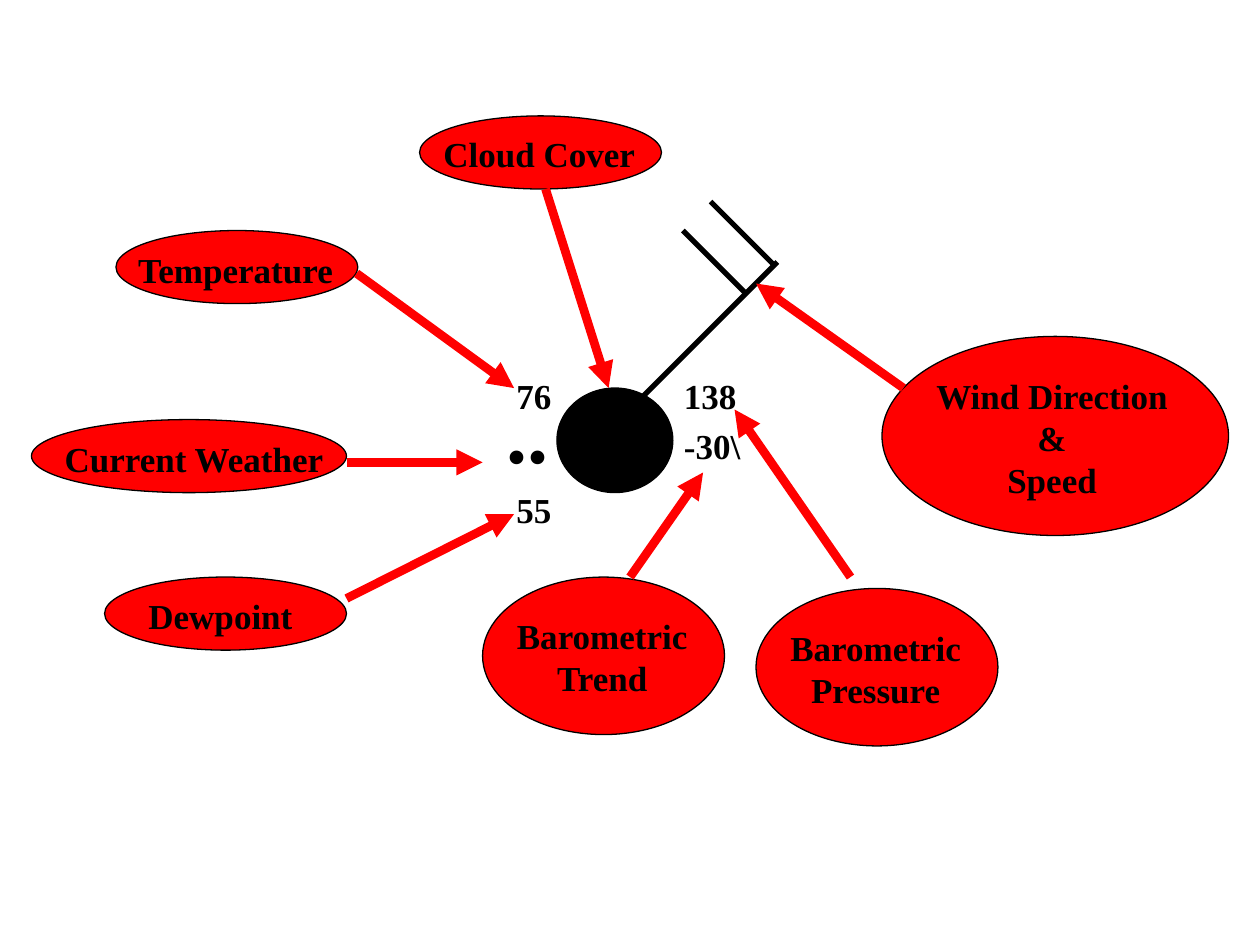
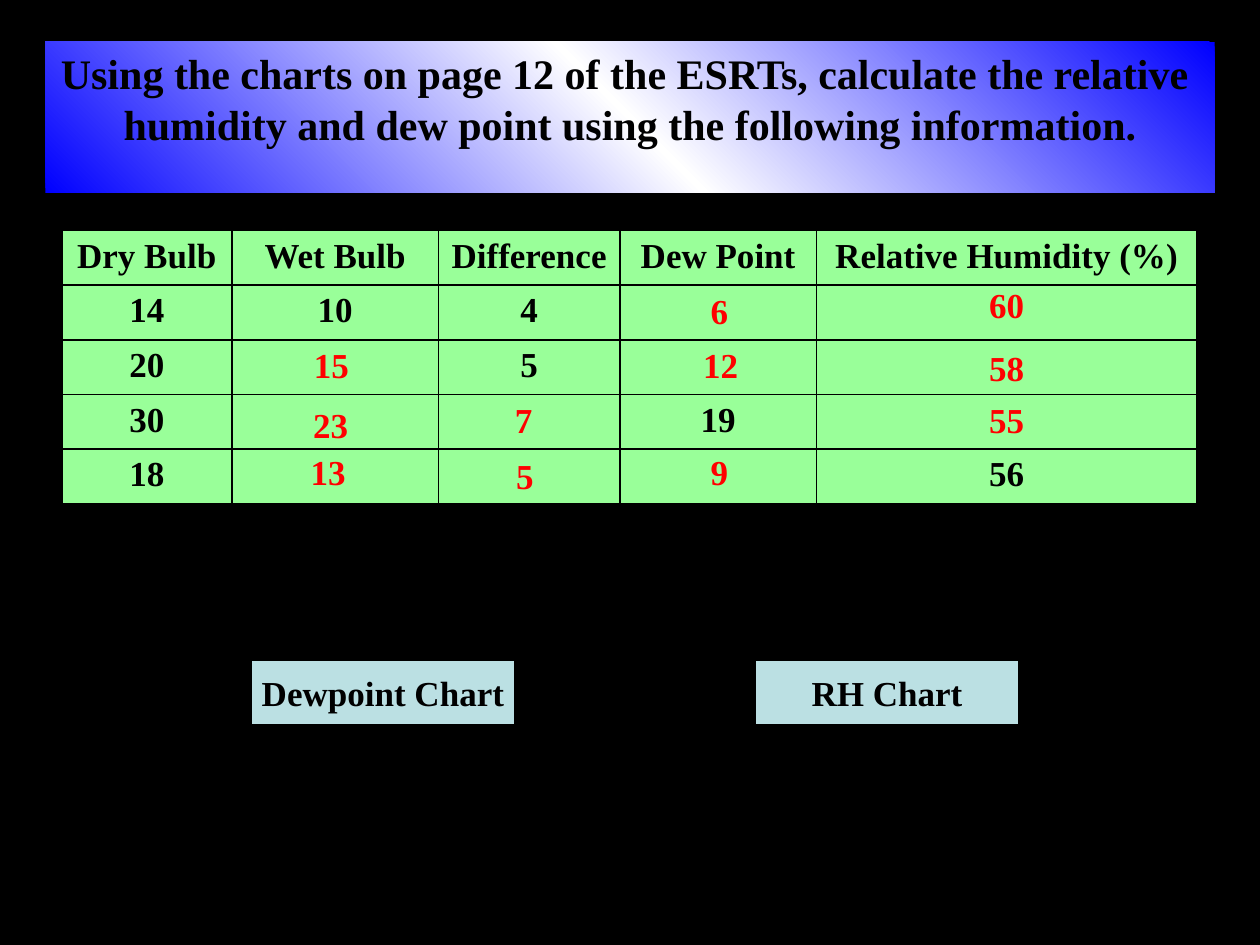
import copy

import pptx
import pptx.dml.color
import pptx.enum.dml
import pptx.enum.shapes
import pptx.enum.text
import pptx.oxml
import pptx.oxml.ns
import pptx.util

Inches = pptx.util.Inches
Pt = pptx.util.Pt
Shapes = pptx.enum.shapes.MSO_SHAPE
Align = pptx.enum.text.PP_ALIGN
Anchor = pptx.enum.text.MSO_ANCHOR
AutoSize = pptx.enum.text.MSO_AUTO_SIZE

FONT = "Times New Roman"
TEXT_SIZE = 20
BLACK, WHITE, RED, BLUE = "000000", "FFFFFF", "FF0000", "0000FF"
TABLE_GREEN, BUTTON_BLUE = "99FF99", "BBE0E3"
TABLE_HEIGHT = 2.17

# Oval box, label lines, label box
CALLOUTS = [
    ((0.83, 4.58, 1.92, 0.58), ["Dewpoint"], (1, 4.67, 1.5, 0.43)),
    ((0.92, 1.83, 1.92, 0.58), ["Temperature"], (0.92, 1.92, 1.9, 0.43)),
    ((7, 2.67, 2.75, 1.58), ["Wind Direction", "&", "Speed"], (7.3, 2.92, 2.1, 1.1)),
    ((6, 4.67, 1.92, 1.25), ["Barometric", "Pressure"], (6.1, 4.92, 1.7, 0.77)),
    ((0.25, 3.33, 2.5, 0.58), ["Current Weather"], (0.34, 3.42, 2.4, 0.43)),
    ((3.33, 0.92, 1.92, 0.58), ["Cloud Cover"], (3.38, 1, 1.8, 0.43)),
    ((3.83, 4.58, 1.92, 1.25), ["Barometric", "Trend"], (3.93, 4.83, 1.7, 0.77)),
]
CALLOUT_ARROWS = [
    ((2.83, 2.17), (4.08, 3.08)),
    ((2.75, 4.75), (4.08, 4.08)),
    ((7.17, 3.08), (6, 2.25)),
    ((6.75, 4.58), (5.83, 3.25)),
    ((2.75, 3.67), (3.83, 3.67)),
    ((4.33, 1.5), (4.83, 3.08)),
    ((5, 4.58), (5.58, 3.75)),
]
WIND_SHAFT_AND_BARBS = [
    ((5.08, 3.17), (6.17, 2.08)),
    ((5.64, 1.6), (6.14, 2.1)),
    ((5.42, 1.83), (5.92, 2.33)),
]
STATION_READINGS = [
    ("76", (4, 2.92, 0.48, 0.43), TEXT_SIZE),
    ("55", (4, 3.83, 0.48, 0.43), TEXT_SIZE),
    ("..", (3.92, 2.96, 0.53, 0.9), 48),
    ("138", (5.33, 2.92, 0.62, 0.43), TEXT_SIZE),
    ("-30\\", (5.33, 3.32, 0.65, 0.43), TEXT_SIZE),
]

COLUMN_WIDTHS = [1.35, 1.64, 1.44, 1.56, 3.02]
HUMIDITY_ROWS = [
    ["Dry Bulb", "Wet Bulb", "Difference", "Dew Point", "Relative Humidity (%)"],
    ["14", "10", "4", "", ""],
    ["20", "", "5", "", ""],
    ["30", "", "", "19", ""],
    ["18", "", "", "", "56"],
]
# Answer, left, top, width
ANSWERS = [
    ("6", 5, 2.25, 1.42),
    ("15", 1.92, 2.68, 1.42),
    ("23", 2.2, 3.15, 0.85),
    ("13", 2.18, 3.53, 0.85),
    ("7", 3.73, 3.11, 0.85),
    ("5", 3.74, 3.56, 0.85),
    ("12", 5.01, 2.68, 1.42),
    ("9", 5, 3.53, 1.42),
    ("55", 7.28, 3.11, 1.42),
    ("58", 7.28, 2.7, 1.42),
    ("60", 7.28, 2.2, 1.42),
]


def rgb(color):
    return pptx.dml.color.RGBColor.from_string(color)


def inches(values):
    return [Inches(value) for value in values]


def add_slide(presentation, layout_index, background):
    slide = presentation.slides.add_slide(presentation.slide_layouts[layout_index])
    slide.background.fill.solid()
    slide.background.fill.fore_color.rgb = rgb(background)
    return slide


def write_lines(text_frame, lines, size=TEXT_SIZE, color=BLACK, alignment=Align.CENTER):
    """Write each line as a bold paragraph."""
    for index, line in enumerate(lines):
        paragraph = text_frame.add_paragraph() if index else text_frame.paragraphs[0]
        paragraph.alignment = alignment
        run = paragraph.add_run()
        run.text = line
        run.font.name = FONT
        run.font.size = Pt(size)
        run.font.bold = True
        run.font.color.rgb = rgb(color)


def add_label(slide, box, lines, wrap=False, **style):
    text_frame = slide.shapes.add_textbox(*inches(box)).text_frame
    text_frame.word_wrap = wrap
    text_frame.auto_size = AutoSize.SHAPE_TO_FIT_TEXT
    write_lines(text_frame, lines, **style)


def add_filled_shape(slide, kind, box, fill, outline=None):
    shape = slide.shapes.add_shape(kind, *inches(box))
    shape.shadow.inherit = False
    shape.fill.solid()
    shape.fill.fore_color.rgb = rgb(fill)
    if outline:
        shape.line.color.rgb = rgb(outline)
        shape.line.width = Pt(0.75)
    else:
        shape.line.fill.background()
    return shape


def add_line(slide, start, end, color, width, arrow=False):
    connector = slide.shapes.add_connector(
        pptx.enum.shapes.MSO_CONNECTOR.STRAIGHT, *inches(start + end))
    connector.line.color.rgb = rgb(color)
    connector.line.width = Pt(width)
    if arrow:
        head = pptx.oxml.parse_xml(
            f'<a:tailEnd {pptx.oxml.ns.nsdecls("a")} type="triangle"/>')
        connector.line._get_or_add_ln().append(head)
    effects = pptx.oxml.parse_xml(f'<a:effectLst {pptx.oxml.ns.nsdecls("a")}/>')
    connector._element.spPr.append(effects)


def fill_title_band(title, lines):
    title.left, title.top, title.width, title.height = inches((0.36, 0.33, 9.28, 1.2))
    title.fill.gradient()
    stop_list = title._element.spPr.find(".//" + pptx.oxml.ns.qn("a:gsLst"))
    stop_list.append(copy.deepcopy(stop_list[0]))
    stops = zip(title.fill.gradient_stops, (0, 0.5, 1), (BLUE, WHITE, BLUE))
    for stop, position, color in stops:
        stop.position = position
        stop.color.rgb = rgb(color)
    title.fill.gradient_angle = 45

    text_frame = title.text_frame
    text_frame.auto_size = AutoSize.NONE
    text_frame.word_wrap = False
    text_frame.vertical_anchor = Anchor.TOP
    text_frame.margin_top = Inches(0.05)
    write_lines(text_frame, lines, size=24)
    for paragraph in text_frame.paragraphs:
        paragraph.space_before = Pt(0)


def add_cell_borders(cell):
    properties = cell._tc.get_or_add_tcPr()
    for index, side in enumerate(("lnL", "lnR", "lnT", "lnB")):
        border = pptx.oxml.parse_xml(
            f'<a:{side} {pptx.oxml.ns.nsdecls("a")} w="{Pt(1)}"><a:solidFill>'
            f'<a:srgbClr val="{BLACK}"/></a:solidFill></a:{side}>')
        properties.insert(index, border)


def add_humidity_table(slide):
    box = (0.49, 1.83, sum(COLUMN_WIDTHS), TABLE_HEIGHT)
    table = slide.shapes.add_table(
        len(HUMIDITY_ROWS), len(COLUMN_WIDTHS), *inches(box)).table
    for column, width in zip(table.columns, COLUMN_WIDTHS):
        column.width = Inches(width)
    for row_index, values in enumerate(HUMIDITY_ROWS):
        for column_index, value in enumerate(values):
            cell = table.cell(row_index, column_index)
            cell.fill.solid()
            cell.fill.fore_color.rgb = rgb(TABLE_GREEN)
            add_cell_borders(cell)
            if value:
                write_lines(cell.text_frame, [value])


def add_button(slide, left, caption):
    button = add_filled_shape(
        slide, Shapes.ACTION_BUTTON_CUSTOM, (left, 5.25, 2.08, 0.5), BUTTON_BLUE)
    button.text_frame.word_wrap = False
    button.text_frame.vertical_anchor = Anchor.MIDDLE
    write_lines(button.text_frame, [caption])


def build_station_model(presentation):
    slide = add_slide(presentation, 6, WHITE)
    add_filled_shape(slide, Shapes.OVAL, (4.42, 3.08, 0.92, 0.83), BLACK, BLACK)
    for start, end in WIND_SHAFT_AND_BARBS:
        add_line(slide, start, end, BLACK, 3)
    for reading, box, size in STATION_READINGS:
        add_label(slide, box, [reading], size=size, alignment=Align.LEFT)
    for oval_box, lines, label_box in CALLOUTS:
        add_filled_shape(slide, Shapes.OVAL, oval_box, RED, BLACK)
        add_label(slide, label_box, lines)
    for start, end in CALLOUT_ARROWS:
        add_line(slide, start, end, RED, 5, arrow=True)


def build_humidity_exercise(presentation):
    slide = add_slide(presentation, 5, BLACK)
    fill_title_band(slide.shapes.title, [
        "Using the charts on page 12 of the ESRTs, calculate the relative ",
        "humidity and dew point using the following information.",
    ])
    add_humidity_table(slide)
    for answer, left, top, width in ANSWERS:
        add_label(slide, (left, top, width, 0.43), [answer], wrap=True, color=RED)
    add_button(slide, 2, "Dewpoint Chart")
    add_button(slide, 6, "RH Chart")


def main():
    presentation = pptx.Presentation()
    presentation.slide_width = Inches(10)
    presentation.slide_height = Inches(7.5)
    build_station_model(presentation)
    build_humidity_exercise(presentation)
    presentation.save("out.pptx")


if __name__ == "__main__":
    main()
